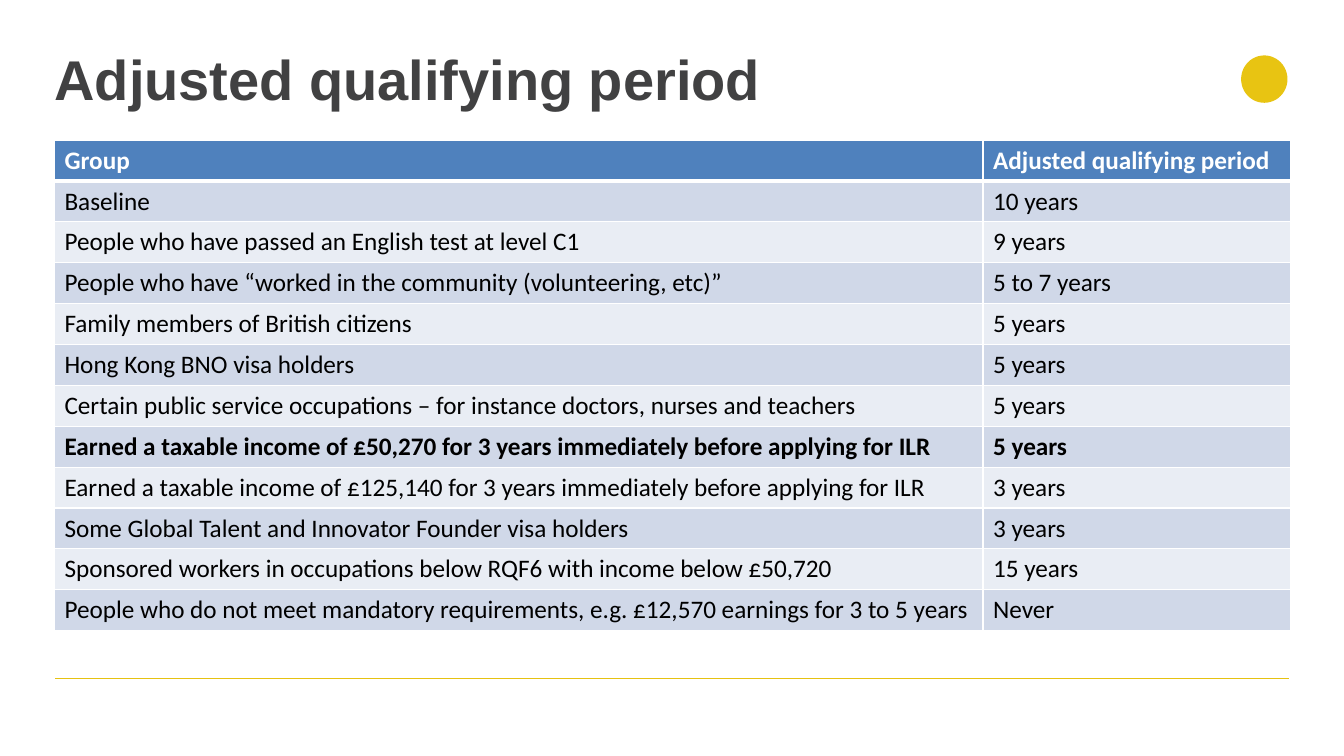
import pptx
import pptx.dml.color
import pptx.enum.shapes
import pptx.enum.text
import pptx.oxml.ns
import pptx.util
from lxml import etree

Inches, Pt = pptx.util.Inches, pptx.util.Pt
RGBColor = pptx.dml.color.RGBColor
PP_ALIGN = pptx.enum.text.PP_ALIGN
qn = pptx.oxml.ns.qn

WHITE = RGBColor(0xFF, 0xFF, 0xFF)
BLACK = RGBColor(0, 0, 0)
TITLE_GREY = RGBColor(0x41, 0x41, 0x42)
RULE_GOLD = RGBColor(0xE6, 0xC2, 0x12)
MARK_GOLD = RGBColor(0xE8, 0xC4, 0x12)
HEADER_BLUE = RGBColor(0x4F, 0x81, 0xBD)
BANDS = (RGBColor(0xD0, 0xD8, 0xE8), RGBColor(0xE9, 0xED, 0xF4))

SLIDE_W, SLIDE_H = 13.33, 7.5
MARGIN = 0.54
COLUMN_WIDTHS = (9.21, 3.05)
TABLE_TOP, TABLE_H = 1.39, 4.87
TITLE = "Adjusted qualifying period"
HEADINGS = ("Group", "Adjusted qualifying period")
PERIODS = (
    ("Baseline", "10 years"),
    ("People who have passed an English test at level C1", "9 years"),
    ("People who have “worked in the community (volunteering, etc)”", "5 to 7 years"),
    ("Family members of British citizens", "5 years"),
    ("Hong Kong BNO visa holders", "5 years"),
    ("Certain public service occupations – for instance doctors, nurses and teachers", "5 years"),
    ("Earned a taxable income of £50,270 for 3 years immediately before applying for ILR", "5 years"),
    ("Earned a taxable income of £125,140 for 3 years immediately before applying for ILR", "3 years"),
    ("Some Global Talent and Innovator Founder visa holders", "3 years"),
    ("Sponsored workers in occupations below RQF6 with income below £50,720", "15 years"),
    ("People who do not meet mandatory requirements, e.g. £12,570 earnings for 3 to 5 years", "Never"),
)
BOLD_ROWS = (0, 7)
JUSTIFIED_FROM = 9


def add_run(p, text, font, size, color, bold):
    r = p.add_run()
    r.text = text
    r.font.name, r.font.size, r.font.bold = font, Pt(size), bold
    r.font.color.rgb = color


def add_title(s):
    sp = s.shapes.add_textbox(Inches(MARGIN), Inches(0.44), Inches(11.38), Inches(0.67))
    tf = sp.text_frame
    tf.word_wrap = True
    tf.margin_left = tf.margin_right = tf.margin_top = tf.margin_bottom = 0
    add_run(tf.paragraphs[0], TITLE, "Arial", 40, TITLE_GREY, True)


def add_corner_mark(s):
    sp = s.shapes.add_shape(pptx.enum.shapes.MSO_SHAPE.OVAL,
                            Inches(12.31), Inches(0.55), Inches(0.46), Inches(0.47))
    sp.shadow.inherit = False
    sp.fill.solid()
    sp.fill.fore_color.rgb = MARK_GOLD
    sp.line.fill.background()


def add_footer_rule(s):
    y = Inches(6.73)
    line = s.shapes.add_connector(pptx.enum.shapes.MSO_CONNECTOR.STRAIGHT,
                                  Inches(0.55), y, Inches(12.78), y)
    line.line.color.rgb = RULE_GOLD
    line.line.width = Pt(0.96)
    etree.SubElement(line._element.spPr, qn("a:effectLst"))


def set_borders(cell, top, bottom):
    """Draw white borders; top and bottom are widths in points."""
    tcPr = cell._tc.get_or_add_tcPr()
    for side, width in (("L", 1), ("R", 1), ("T", top), ("B", bottom)):
        ln = etree.SubElement(tcPr, qn(f"a:ln{side}"), w=str(Pt(width)))
        fill = etree.SubElement(ln, qn("a:solidFill"))
        etree.SubElement(fill, qn("a:srgbClr"), val=str(WHITE))


def add_period_table(s):
    rows = (HEADINGS,) + PERIODS
    frame = s.shapes.add_table(len(rows), len(HEADINGS), Inches(MARGIN), Inches(TABLE_TOP),
                               Inches(sum(COLUMN_WIDTHS)), Inches(TABLE_H))
    table = frame.table
    for column, width in zip(table.columns, COLUMN_WIDTHS):
        column.width = Inches(width)
    for i, texts in enumerate(rows):
        for j, text in enumerate(texts):
            cell = table.cell(i, j)
            set_borders(cell, 3 if i == 1 else 1, 3 if i == 0 else 1)
            cell.fill.solid()
            cell.fill.fore_color.rgb = BANDS[(i - 1) % 2] if i else HEADER_BLUE
            p = cell.text_frame.paragraphs[0]
            if j == 0 and i >= JUSTIFIED_FROM:
                p.alignment = PP_ALIGN.JUSTIFY
            add_run(p, text, "Calibri", 18, BLACK if i else WHITE, i in BOLD_ROWS)


def main():
    prs = pptx.Presentation()
    prs.slide_width, prs.slide_height = Inches(SLIDE_W), Inches(SLIDE_H)
    s = prs.slides.add_slide(prs.slide_layouts[6])
    add_footer_rule(s)
    add_corner_mark(s)
    add_title(s)
    add_period_table(s)
    prs.save("out.pptx")


if __name__ == "__main__":
    main()
